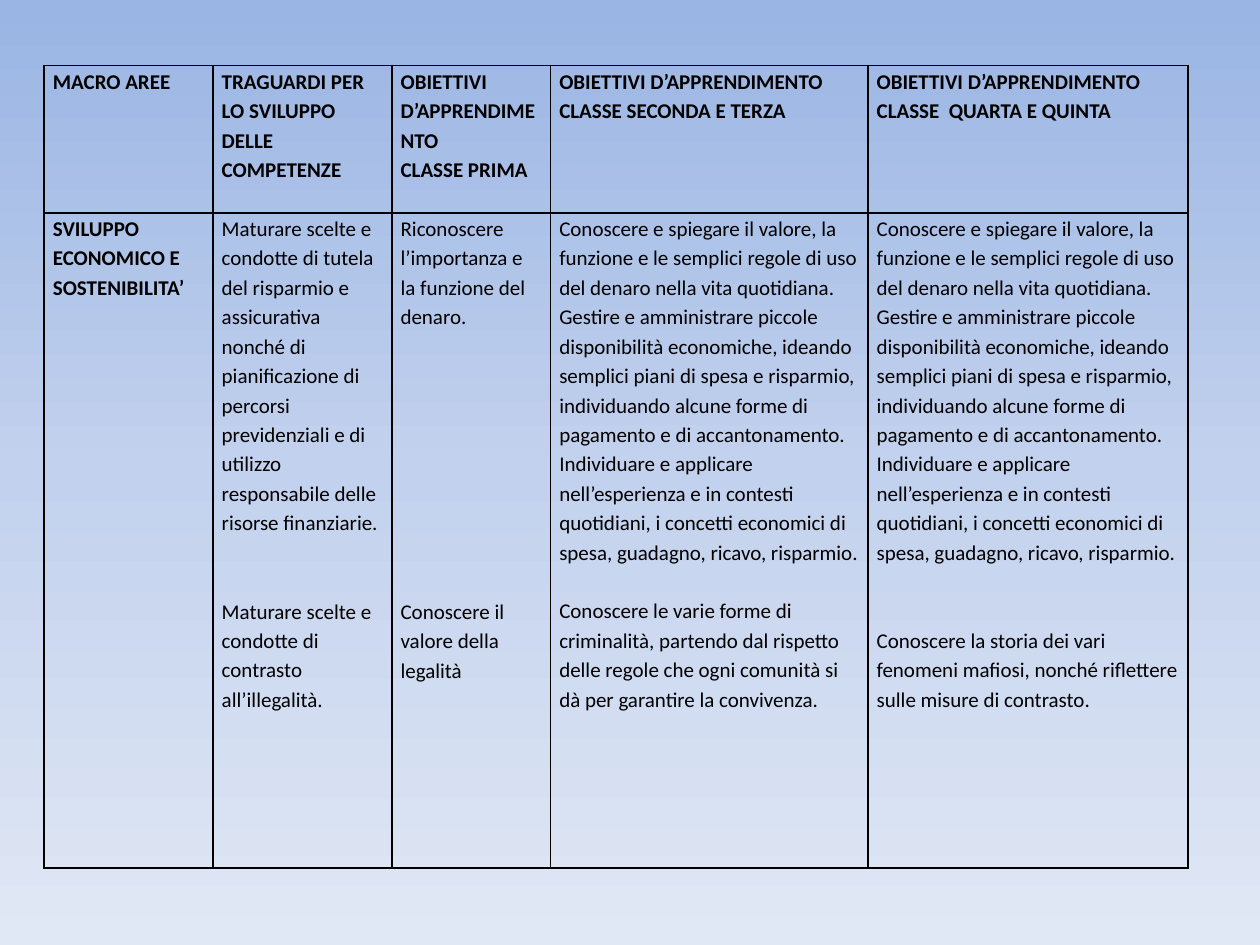
from copy import deepcopy

from lxml import etree
from pptx import Presentation
from pptx.dml.color import RGBColor
from pptx.oxml.ns import qn
from pptx.util import Pt

FONT, SIZE, SPACING = "Calibri", 12, 1.15
LINE = 16.84  # height of one text line in points
BLACK = "000000"
GRADIENT = [(0, "9AB5E4"), (0.5, "C2D1ED"), (1, "E1E8F5")]
COLUMNS = [96.5, 102.2, 90.7, 181.4, 182.9]
ROWS = [84.2, 374.4]

GOALS = "OBIETTIVI D’APPRENDIMENTO"
MONEY = [
    "Conoscere e spiegare il valore, la funzione e le semplici regole di uso "
    "del denaro nella vita quotidiana.",
    "Gestire e amministrare piccole disponibilità economiche, ideando semplici "
    "piani di spesa e risparmio, individuando alcune forme di pagamento e di "
    "accantonamento.",
    "Individuare e applicare nell’esperienza e in contesti quotidiani, i concetti "
    "economici di spesa, guadagno, ricavo, risparmio.",
]
HEADER = [
    ["MACRO AREE"],
    ["TRAGUARDI PER LO SVILUPPO", "DELLE COMPETENZE"],
    [GOALS, "CLASSE PRIMA"],
    [GOALS, "CLASSE SECONDA E TERZA"],
    [GOALS, "CLASSE  QUARTA E QUINTA"],
]
# A pair holds a paragraph and the number of lines left free above it.
BODY = [
    ["SVILUPPO", "ECONOMICO E SOSTENIBILITA’"],
    ["Maturare scelte e condotte di tutela del risparmio e assicurativa nonché di "
     "pianificazione di percorsi previdenziali e di utilizzo responsabile delle "
     "risorse finanziarie.",
     ("Maturare scelte e condotte di contrasto all’illegalità.", 2)],
    ["Riconoscere l’importanza e la funzione del denaro.",
     ("Conoscere il valore della legalità", 9)],
    MONEY + [("Conoscere le varie forme di criminalità, partendo dal rispetto delle "
              "regole che ogni comunità si dà per garantire la convivenza.", 1)],
    MONEY + [("Conoscere la storia dei vari fenomeni mafiosi, nonché riflettere "
              "sulle misure di contrasto.", 2)],
]


def rgb(value):
    return RGBColor.from_string(value)


class Deck:
    def __init__(self, width, height):
        self.prs = Presentation()
        self.prs.slide_width, self.prs.slide_height = Pt(width), Pt(height)
        self.s = self.prs.slides.add_slide(self.prs.slide_layouts[6])

    def background(self, stops):
        fill = self.s.background.fill
        fill.gradient()
        fill.gradient_angle = 270
        gs_list = next(self.s.element.iter(qn("a:gsLst")))
        while len(gs_list) < len(stops):
            gs_list.append(deepcopy(gs_list[0]))
        for stop, (position, color) in zip(fill.gradient_stops, stops):
            stop.position = position
            stop.color.rgb = rgb(color)

    def table(self, left, top, columns, rows, content):
        frame = self.s.shapes.add_table(len(rows), len(columns), Pt(left), Pt(top),
                                        Pt(sum(columns)), Pt(sum(rows)))
        table = frame.table
        table.first_row = table.horz_banding = False
        for column, width in zip(table.columns, columns):
            column.width = Pt(width)
        for i, (row, height) in enumerate(zip(table.rows, rows)):
            row.height = Pt(height)
            for j, cell in enumerate(row.cells):
                self.cell(cell, content[i][j], bold=i == 0 or j == 0)

    def cell(self, cell, paragraphs, bold):
        cell.margin_left = cell.margin_right = Pt(5.04)
        cell.margin_top = cell.margin_bottom = 0
        self.borders(cell)
        cell.fill.background()
        tf = cell.text_frame
        for k, item in enumerate(paragraphs):
            text, gap = item if isinstance(item, tuple) else (item, 0)
            p = tf.add_paragraph() if k else tf.paragraphs[0]
            p.line_spacing = SPACING
            p.space_before = Pt(gap * LINE)
            r = p.add_run()
            r.text = text
            r.font.name, r.font.size, r.font.bold = FONT, Pt(SIZE), bold
            r.font.color.rgb = rgb(BLACK)

    def borders(self, cell, color=BLACK, width=1):
        tc_pr = cell._tc.get_or_add_tcPr()
        for side in ("lnL", "lnR", "lnT", "lnB"):
            ln = etree.SubElement(tc_pr, qn(f"a:{side}"), w=str(Pt(width)))
            fill = etree.SubElement(ln, qn("a:solidFill"))
            etree.SubElement(fill, qn("a:srgbClr"), val=color)


def main():
    deck = Deck(720, 540)
    deck.background(GRADIENT)
    deck.table(25.2, 37.4, COLUMNS, ROWS, [HEADER, BODY])
    deck.prs.save("out.pptx")


if __name__ == "__main__":
    main()
